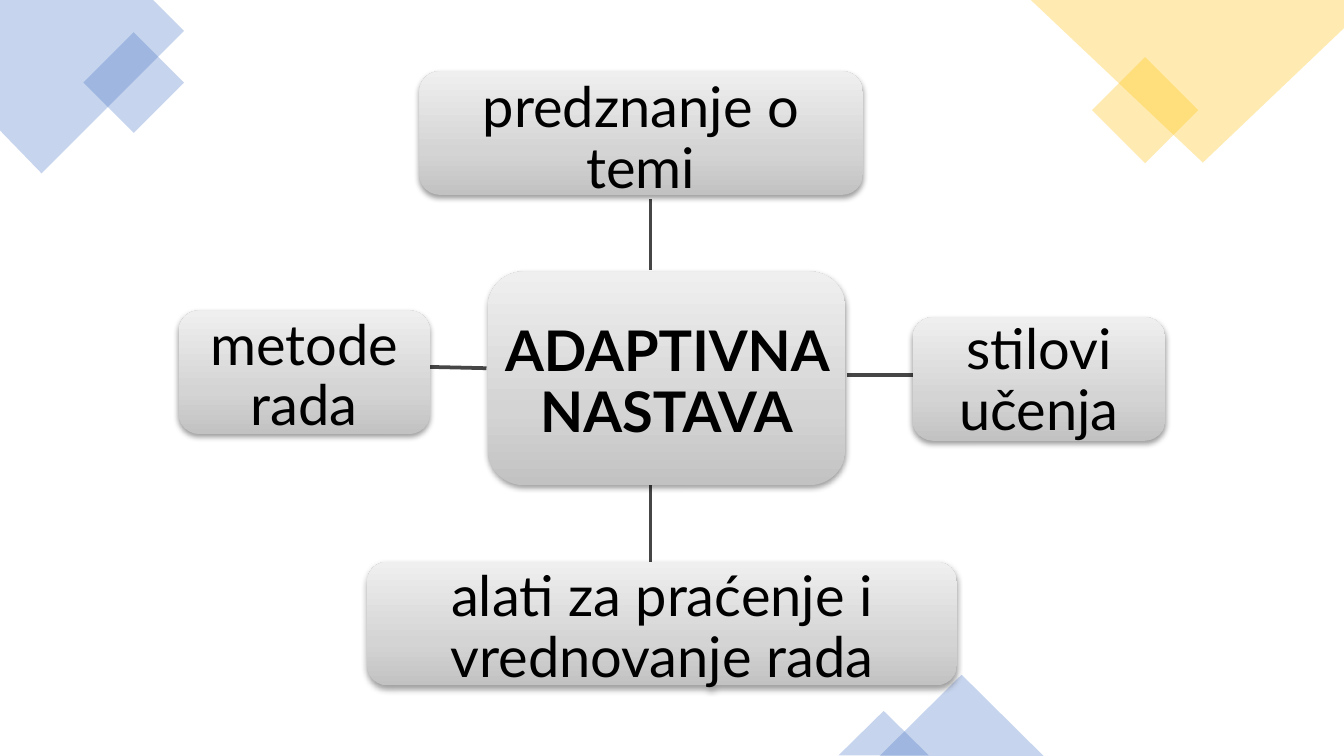
from dataclasses import dataclass

from pptx import Presentation
from pptx.dml.color import RGBColor
from pptx.enum.shapes import MSO_CONNECTOR, MSO_SHAPE
from pptx.enum.text import MSO_ANCHOR, PP_ALIGN
from pptx.oxml import parse_xml
from pptx.oxml.ns import nsdecls
from pptx.shapes.base import BaseShape
from pptx.slide import Slide
from pptx.util import Inches, Pt

WIDTH = Inches(10)
HEIGHT = WIDTH * 9 // 16

BLUE = RGBColor(0x44, 0x72, 0xC4)
GOLD = RGBColor(0xFF, 0xC0, 0x00)
BLACK = RGBColor(0x00, 0x00, 0x00)
GRAY = RGBColor(0x46, 0x46, 0x46)
STOPS = {
    0: RGBColor(0xC2, 0xC2, 0xC2),
    35: RGBColor(0xD4, 0xD4, 0xD4),
    100: RGBColor(0xEF, 0xEF, 0xEF),
}

FONT = {"name": "Lato", "size": Pt(30)}
PARA = {"alignment": PP_ALIGN.CENTER, "line_spacing": 0.9, "space_after": Pt(6)}
FRAME = {"word_wrap": True, "vertical_anchor": MSO_ANCHOR.MIDDLE}


@dataclass
class Preset:
    kind: MSO_SHAPE
    left: float
    top: float
    width: float
    height: float
    color: RGBColor
    turn: int = 0


@dataclass
class Patch:
    points: list[tuple[float, float]]
    color: RGBColor


@dataclass
class Node:
    text: str
    left: float
    top: float
    width: float
    drop: float  # how far the text sits below the middle
    height: float = 0.92
    side: float = 0.08
    bold: bool = False


@dataclass
class Link:
    start: tuple[float, float]
    end: tuple[float, float]


DECOR = [
    Patch([(0, 0), (1.14, 0), (1.37, 0.23), (0.31, 1.29), (0, 0.97)], BLUE),
    Preset(MSO_SHAPE.RECTANGLE, 0.73, 0.35, 0.53, 0.53, BLUE, 45),
    Preset(MSO_SHAPE.RECTANGLE, 8.24, 0.54, 0.56, 0.56, GOLD, 45),
    Patch([(7.67, 0), (10, 0), (10, 0.21), (8.95, 1.21)], GOLD),
    Preset(MSO_SHAPE.ISOSCELES_TRIANGLE, 6.54, 5.02, 1.23, 0.61, BLUE),
    Preset(MSO_SHAPE.ISOSCELES_TRIANGLE, 6.24, 5.29, 0.67, 0.33, BLUE),
]
NODES = [
    Node("ADAPTIVNA NASTAVA", 3.63, 2.02, 2.66, 0.04, 1.59, 0.03, True),
    Node("predznanje o temi", 3.12, 0.53, 3.3, 0.05),
    Node("stilovi učenja", 6.79, 2.36, 1.88, 0.02),
    Node("alati za praćenje i vrednovanje rada", 2.73, 4.18, 4.39, 0.04),
    Node("metode rada", 1.33, 2.31, 1.87, 0.04),
]
LINKS = [
    Link((4.84, 2.01), (4.84, 1.48)),
    Link((6.3, 2.79), (6.79, 2.79)),
    Link((4.84, 3.61), (4.84, 4.18)),
    Link((3.62, 2.74), (3.19, 2.73)),
]


def assign(target: object, values: dict) -> None:
    for name, value in values.items():
        setattr(target, name, value)


def tint(shape: BaseShape, color: RGBColor) -> None:
    """Fill at 30 % opacity, with no line and no shadow."""
    shape.shadow.inherit = False
    shape.line.fill.background()
    shape.fill.solid()
    shape.fill.fore_color.rgb = color
    tone = shape._element.spPr.find(".//{*}srgbClr")
    tone.append(parse_xml(f'<a:alpha {nsdecls("a")} val="30000"/>'))


def add_preset(slide: Slide, item: Preset) -> None:
    box = map(Inches, (item.left, item.top, item.width, item.height))
    shape = slide.shapes.add_shape(item.kind, *box)
    shape.rotation = item.turn
    tint(shape, item.color)


def add_patch(slide: Slide, patch: Patch) -> None:
    first, *rest = [(Inches(x), Inches(y)) for x, y in patch.points]
    pen = slide.shapes.build_freeform(*first)
    pen.add_line_segments(rest, close=True)
    tint(pen.convert_to_shape(), patch.color)


def shade(shape: BaseShape) -> None:
    """Give the grey gradient and the soft shadow below."""
    stops = "".join(
        f'<a:gs pos="{at * 1000}"><a:srgbClr val="{color}"/></a:gs>'
        for at, color in STOPS.items()
    )
    props = shape._element.spPr
    props.append(parse_xml(
        f'<a:gradFill {nsdecls("a")} rotWithShape="1"><a:gsLst>{stops}</a:gsLst>'
        '<a:lin ang="16200000" scaled="0"/></a:gradFill>'
    ))
    shape.line.fill.background()
    props.append(parse_xml(
        f'<a:effectLst {nsdecls("a")}>'
        f'<a:outerShdw blurRad="{Pt(3.1)}" dist="{Pt(1.6)}" dir="5400000" rotWithShape="0">'
        '<a:srgbClr val="000000"><a:alpha val="38000"/></a:srgbClr>'
        '</a:outerShdw></a:effectLst>'
    ))


def add_node(slide: Slide, node: Node) -> None:
    box = map(Inches, (node.left, node.top, node.width, node.height))
    shape = slide.shapes.add_shape(MSO_SHAPE.ROUNDED_RECTANGLE, *box)
    shade(shape)
    frame = shape.text_frame
    assign(frame, FRAME | {
        "margin_left": Inches(node.side),
        "margin_right": Inches(node.side),
        "margin_top": Inches(0.08 + 2 * node.drop),
        "margin_bottom": Inches(0.08),
    })
    para = frame.paragraphs[0]
    assign(para, PARA)
    run = para.add_run()
    run.text = node.text
    assign(run.font, FONT | {"bold": node.bold})
    run.font.color.rgb = BLACK


def add_link(slide: Slide, link: Link) -> None:
    ends = map(Inches, link.start + link.end)
    line = slide.shapes.add_connector(MSO_CONNECTOR.STRAIGHT, *ends)
    line.line.color.rgb = GRAY
    line.line.width = Pt(2)
    line._element.spPr.append(parse_xml(f'<a:effectLst {nsdecls("a")}/>'))


def main() -> None:
    deck = Presentation()
    deck.slide_width, deck.slide_height = WIDTH, HEIGHT
    slide = deck.slides.add_slide(deck.slide_layouts[6])
    for item in DECOR:
        draw = add_patch if isinstance(item, Patch) else add_preset
        draw(slide, item)
    for link in LINKS:
        add_link(slide, link)
    for node in NODES:
        add_node(slide, node)
    deck.save("out.pptx")


if __name__ == "__main__":
    main()
